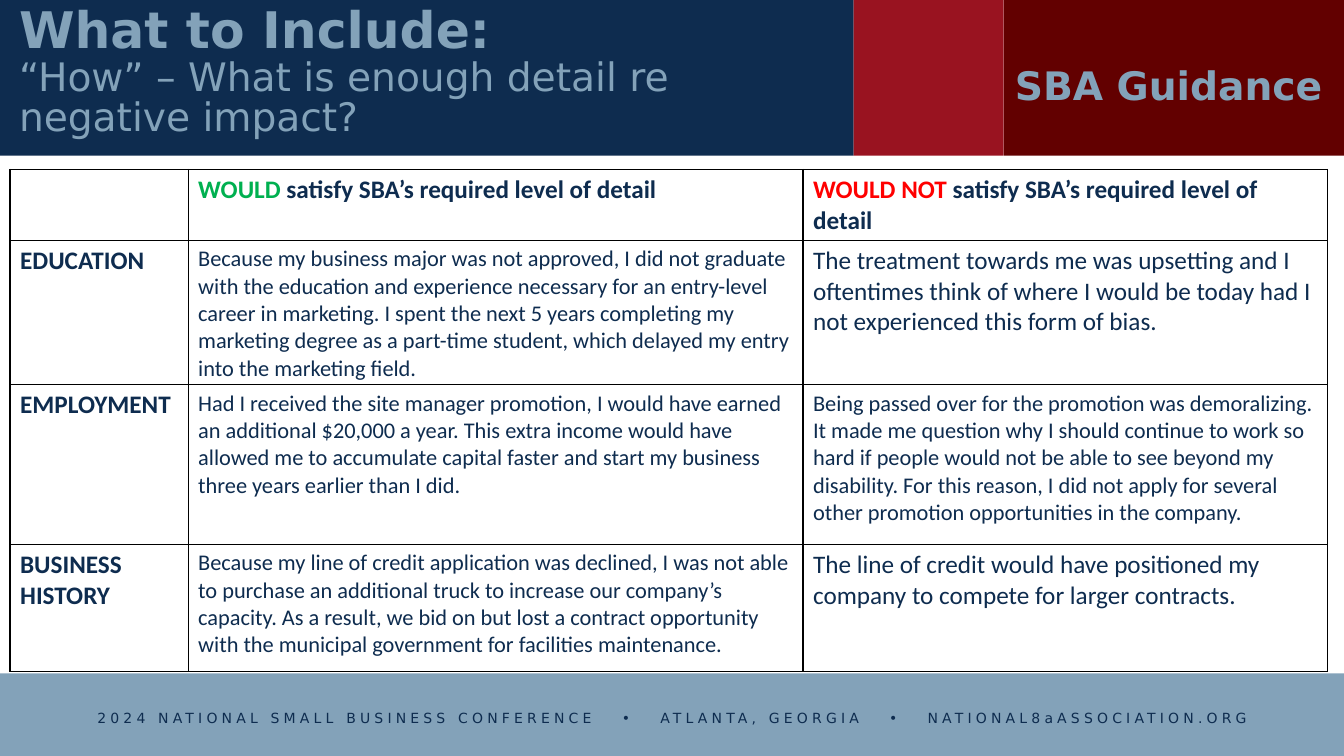
"""Builds the slide on how much detail a negative impact statement needs."""
from lxml import etree
from pptx import Presentation
from pptx.dml.color import RGBColor
from pptx.enum.shapes import MSO_SHAPE
from pptx.enum.text import MSO_ANCHOR, PP_ALIGN
from pptx.oxml.ns import qn
from pptx.util import Pt

NAVY = RGBColor(0x0E, 0x2C, 0x4F)
CRIMSON = RGBColor(0x99, 0x13, 0x20)
MAROON = RGBColor(0x62, 0x00, 0x00)
STEEL = RGBColor(0x83, 0xA2, 0xB9)
GREEN = RGBColor(0x00, 0xB0, 0x50)
RED = RGBColor(0xFF, 0x00, 0x00)
BLACK = RGBColor(0x00, 0x00, 0x00)
HEADING_FONT = "DejaVu Sans"
SLIDE_WIDTH, SLIDE_HEIGHT = 960, 540


def add_run(paragraph, text, size, color, bold=False, name="Calibri"):
    run = paragraph.add_run()
    run.text = text
    run.font.color.rgb = color
    style = {"size": Pt(size), "bold": bold, "name": name}
    for attribute, value in style.items():
        setattr(run.font, attribute, value)
    return run


def add_text_box(left, top, width, height, anchor):
    frame = slide.shapes.add_textbox(Pt(left), Pt(top), Pt(width), Pt(height)).text_frame
    frame.word_wrap = True
    frame.vertical_anchor = anchor
    return frame.paragraphs[0]


presentation = Presentation()
presentation.slide_width = Pt(SLIDE_WIDTH)
presentation.slide_height = Pt(SLIDE_HEIGHT)
slide = presentation.slides.add_slide(presentation.slide_layouts[6])

bands = [
    (0, 0, 609.8, 111.2, NAVY),
    (609.8, 0, 107.2, 111.2, CRIMSON),
    (717, 0, 243, 111.2, MAROON),
    (0, 481, SLIDE_WIDTH, 59, STEEL),
]
for left, top, width, height, color in bands:
    band = slide.shapes.add_shape(
        MSO_SHAPE.RECTANGLE, Pt(left), Pt(top), Pt(width), Pt(height))
    band.shadow.inherit = False
    band.fill.solid()
    band.fill.fore_color.rgb = color
    band.line.fill.background()

footer = add_text_box(0, 503, SLIDE_WIDTH, 19.4, MSO_ANCHOR.TOP)
footer.alignment = PP_ALIGN.CENTER
separator = [(" ", 1540), ("•", 300), (" ", 1540)]
footer_pieces = [
    ("2024 NATIONAL SMALL BUSINESS CONFERENCE", 300), *separator,
    ("ATLANTA, GEORGIA", 300), *separator,
    ("NATIONAL8aASSOCIATION.ORG", 300),
]
for text, spacing in footer_pieces:
    run = add_run(footer, text, 10, NAVY, name=HEADING_FONT)
    run.font._element.set("spc", str(spacing))

title = add_text_box(6.5, 16.6, 594, 86.4, MSO_ANCHOR.BOTTOM)
title.line_spacing = 0.85
add_run(title, "What to Include:", 36, STEEL, True, HEADING_FONT)
title.add_line_break()
add_run(title, "“How” – What is enough detail re negative impact?", 28, STEEL,
        name=HEADING_FONT)

guidance = add_text_box(717.8, 0, 236.2, 81, MSO_ANCHOR.BOTTOM)
guidance.line_spacing = 0.85
add_run(guidance, "SBA Guidance", 28, STEEL, True, HEADING_FONT)

column_widths = [127.2, 439.2, 374.6]
row_heights = [50.6, 102.8, 114, 90.8]
rows = [
    [
        [],
        [("WOULD", 18, GREEN, True),
         (" satisfy SBA’s required level of detail", 18, NAVY, True)],
        [("WOULD NOT ", 18, RED, True),
         ("satisfy SBA’s required level of detail", 18, NAVY, True)],
    ],
    [
        [("EDUCATION", 18, NAVY, True)],
        [("Because my business major was not approved, I did not graduate with the "
          "education and experience necessary for an entry-level career in marketing. "
          "I spent the next 5 years completing my marketing degree as a part-time "
          "student, which delayed my entry into the marketing field.", 16, NAVY)],
        [("The treatment towards me was upsetting and I oftentimes think of where I "
          "would be today had I not experienced this form of bias.", 18, NAVY)],
    ],
    [
        [("EMPLOYMENT", 18, NAVY, True)],
        [("Had I received the site manager promotion, I would have earned an "
          "additional $20,000 a year. This extra income would have allowed me to "
          "accumulate capital faster and start my business three years earlier than "
          "I did.", 16, NAVY)],
        [("Being passed over for the promotion was demoralizing. It made me question "
          "why I should continue to work so hard if people would not be able to see "
          "beyond my disability. For this reason, I did not apply for several other "
          "promotion opportunities in the company.", 16, NAVY)],
    ],
    [
        [("BUSINESS HISTORY", 18, NAVY, True)],
        [("Because my line of credit application was declined, I was not able to "
          "purchase an additional truck to increase our company’s capacity. As a "
          "result, we bid on but lost a contract opportunity with the municipal "
          "government for facilities maintenance.", 16, NAVY)],
        [("The line of credit would have positioned my company to compete for larger "
          "contracts.", 18, NAVY)],
    ],
]
table = slide.shapes.add_table(
    len(rows), len(column_widths), Pt(7.2), Pt(121),
    Pt(sum(column_widths)), Pt(sum(row_heights))).table
table.first_row = False
table.horz_banding = False
for column, width in zip(table.columns, column_widths):
    column.width = Pt(width)
for row, height, contents in zip(table.rows, row_heights, rows):
    row.height = Pt(height)
    for cell, runs in zip(row.cells, contents):
        properties = cell._tc.get_or_add_tcPr()
        for side in ("a:lnL", "a:lnR", "a:lnT", "a:lnB"):
            border = etree.SubElement(properties, qn(side), w=str(Pt(1)))
            fill = etree.SubElement(border, qn("a:solidFill"))
            etree.SubElement(fill, qn("a:srgbClr"), val=str(BLACK))
        cell.fill.background()
        for run in runs:
            add_run(cell.text_frame.paragraphs[0], *run)

presentation.save("out.pptx")
